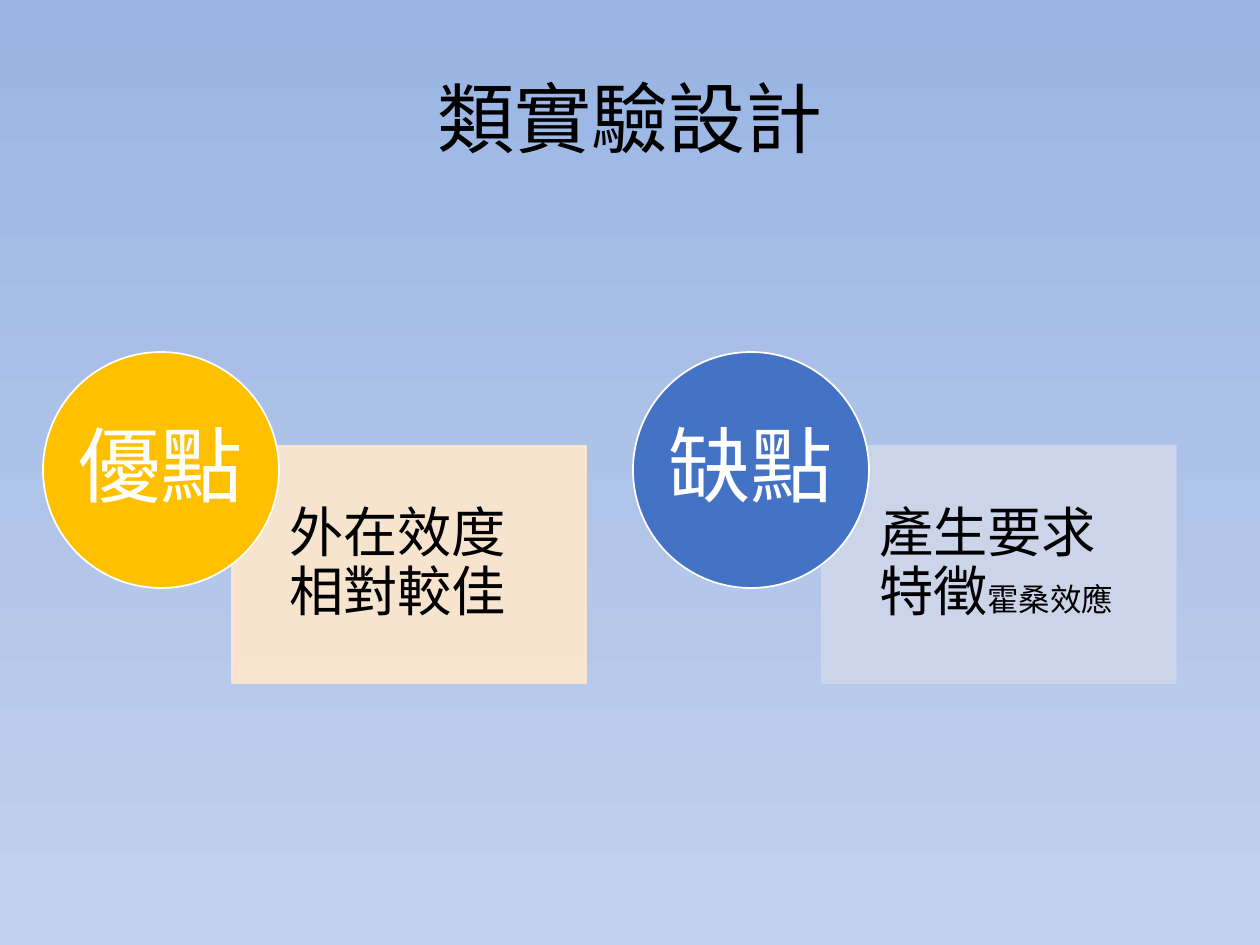
from lxml.etree import SubElement
from pptx import Presentation
from pptx.dml.color import RGBColor
from pptx.enum.shapes import MSO_SHAPE
from pptx.enum.text import MSO_ANCHOR, PP_ALIGN
from pptx.oxml.ns import qn
from pptx.util import Emu, Pt

SCALE = 914400 / 126
FONT = "Noto Sans CJK SC"
BLACK = RGBColor(0x00, 0x00, 0x00)
WHITE = RGBColor(0xFF, 0xFF, 0xFF)
SKY_TOP = RGBColor(0x9A, 0xB5, 0xE4)
SKY_BOTTOM = RGBColor(0xC2, 0xD1, 0xED)
GOLD = RGBColor(0xFF, 0xC0, 0x00)
CREAM = RGBColor(0xFF, 0xE8, 0xCC)
BLUE = RGBColor(0x44, 0x72, 0xC4)
MIST = RGBColor(0xCF, 0xD6, 0xEA)


def px(n):
    return Emu(round(n * SCALE))


def set_background(s):
    fill = s.background.fill
    fill.gradient()
    fill.gradient_angle = 270
    for stop, color in zip(fill.gradient_stops, (SKY_TOP, SKY_BOTTOM)):
        stop.color.rgb = color


def add_text(s, box, runs, color=BLACK, align=PP_ALIGN.LEFT, insets=(0, 0, 0, 0), spacing=1.0):
    tf = s.shapes.add_textbox(*map(px, box)).text_frame
    tf.word_wrap = True
    tf.vertical_anchor = MSO_ANCHOR.MIDDLE
    tf.margin_left, tf.margin_top, tf.margin_right, tf.margin_bottom = map(px, insets)
    p = tf.paragraphs[0]
    p.alignment = align
    p.line_spacing = spacing
    for text, size in runs:
        r = p.add_run()
        r.text = text
        r.font.size = Pt(size)
        r.font.color.rgb = color
        r.font.name = FONT
        SubElement(r.font._element, qn("a:ea"), typeface=FONT)


def add_panel(s, kind, box, fill, line, alpha=100):
    sp = s.shapes.add_shape(kind, *map(px, box))
    sp.shadow.inherit = False
    sp.fill.solid()
    sp.fill.fore_color.rgb = fill
    sp.line.color.rgb = line
    sp.line.width = Pt(1)
    if alpha < 100:
        for clr in sp._element.spPr.iter(qn("a:srgbClr")):
            SubElement(clr, qn("a:alpha"), val=str(alpha * 1000))


def add_title(s, box, text):
    add_text(s, box, [(text, 44)], align=PP_ALIGN.CENTER)


def add_aspect(s, box, label, runs, accent, tint):
    x, y, w, h = box
    card_x, card_y, text_x = 189, 94, 246
    circle, inset = 236, 34
    add_panel(s, MSO_SHAPE.RECTANGLE, (x + card_x, y + card_y, w - card_x, h - card_y),
              tint, tint, alpha=90)
    add_text(s, (x + text_x, y + card_y, w - text_x, h - card_y), runs,
             insets=(0, 30, 30, 30), spacing=0.9)
    add_panel(s, MSO_SHAPE.OVAL, (x, y, circle, circle), accent, WHITE)
    side = circle - 2 * inset
    add_text(s, (x + inset, y + inset, side, side), [(label, 47)],
             color=WHITE, align=PP_ALIGN.CENTER, spacing=0.9)


def main():
    prs = Presentation()
    prs.slide_width, prs.slide_height = px(1260), px(945)
    s = prs.slides.add_slide(prs.slide_layouts[6])
    set_background(s)
    add_title(s, (63, 38, 1134, 157), "類實驗設計")
    aspects = [
        ("優點", [("外在效度相對較佳", 31)], GOLD, CREAM),
        ("缺點", [("產生要求特徵", 31), ("霍桑效應", 18)], BLUE, MIST),
    ]
    for i, aspect in enumerate(aspects):
        add_aspect(s, (43 + 590 * i, 352, 543, 331), *aspect)
    prs.save("out.pptx")


if __name__ == "__main__":
    main()
